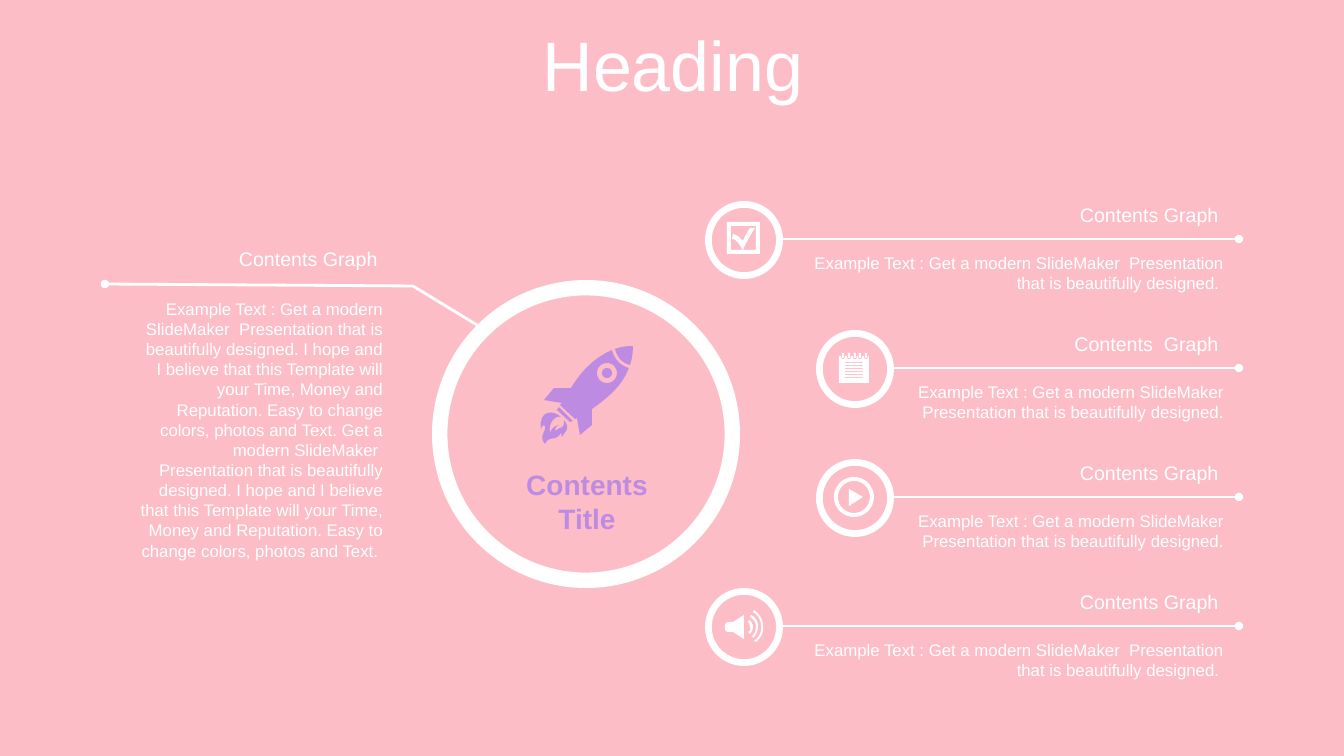
import math

from lxml import etree
from pptx import Presentation
from pptx import util as u
from pptx.dml.color import RGBColor
from pptx.enum import shapes, text
from pptx.oxml.ns import qn

PX = 914400 / 100.8  # EMU per px
FINE = 20            # freeform units per px
PINK, WHITE, PURPLE = "FDBDC7", "FFFFFF", "BE8BE2"
EXAMPLE = "Example Text : Get a modern SlideMaker  Presentation that is beautifully designed. "
HOPE = ("I hope and I believe that this Template will your Time, Money and Reputation. "
        "Easy to change colors, photos and Text. ")
STORY = EXAMPLE + HOPE + EXAMPLE.replace("Example Text : ", "") + HOPE


def emu(*lengths):
    return [u.Emu(round(v * PX)) for v in lengths]


def color(value):
    return RGBColor.from_string(value)


def paint(sp, fill):
    sp.shadow.inherit = False
    sp.fill.solid()
    sp.fill.fore_color.rgb = color(fill)
    sp.line.fill.background()


def add_text(s, box, content, size=12, fill=WHITE, bold=False,
             align=text.PP_ALIGN.RIGHT, spacing=None):
    tf = s.shapes.add_textbox(*emu(*box)).text_frame
    tf.word_wrap = True
    tf.vertical_anchor = text.MSO_ANCHOR.MIDDLE
    for i, line in enumerate(content.split("\n")):
        p = tf.add_paragraph() if i else tf.paragraphs[0]
        p.alignment = align
        if spacing:
            p.line_spacing = spacing
        r = p.add_run()
        r.text = line
        r.font.name, r.font.size, r.font.bold = "Arial", u.Pt(size), bold
        r.font.color.rgb = color(fill)


def add_line(s, start, end, dot=None):
    """dot is 'headEnd' or 'tailEnd', the end that carries the oval."""
    c = s.shapes.add_connector(shapes.MSO_CONNECTOR.STRAIGHT, *emu(*start, *end))
    c.line.color.rgb = color(WHITE)
    c.line.width = u.Pt(2)
    if dot:
        etree.SubElement(c.line._get_or_add_ln(), qn("a:" + dot), type="oval")
    etree.SubElement(c._element.spPr, qn("a:effectLst"))


def add_ring(s, x, y, size, thickness):
    sp = s.shapes.add_shape(shapes.MSO_SHAPE.DONUT, *emu(x, y, size, size))
    sp.adjustments[0] = thickness
    paint(sp, WHITE)


# Outlines: a pair is a corner, six numbers are a cubic curve
def circle(cx, cy, radius):
    turns = [2 * math.pi * i / 48 for i in range(48)]
    return [(cx + radius * math.cos(t), cy + radius * math.sin(t)) for t in turns]


def rect(x, y, w, h):
    return [(x, y), (x + w, y), (x + w, y + h), (x, y + h)]


def flatten(outline, steps=8):
    points = []
    for node in outline:
        if len(node) == 2:
            points.append(node)
            continue
        a, b, c, d = points[-1], node[:2], node[2:4], node[4:]
        for t in (i / steps for i in range(1, steps + 1)):
            v = 1 - t
            points.append(tuple(
                v**3 * a[k] + 3 * v * v * t * b[k] + 3 * v * t * t * c[k] + t**3 * d[k]
                for k in (0, 1)))
    return [(x * FINE, y * FINE) for x, y in points]


def add_icon(s, x, y, outlines, fill=WHITE):
    fb = None
    for outline in outlines:
        points = flatten(outline)
        if fb is None:
            fb = s.shapes.build_freeform(*points[0], scale=PX / FINE)
        else:
            fb.move_to(*points[0])
        fb.add_line_segments(points[1:], close=True)
    paint(fb.convert_to_shape(*emu(x, y)), fill)


def notepad():
    rings = (4, 10, 16, 21, 27)
    page = [(0, 3)]
    for c in rings:
        page += [(c - 2, 3), (c - 2, 4), (c - 2, 7, c + 2, 7, c + 2, 4), (c + 2, 3)]
    page += [(30, 3), (30, 30), (0, 30)]
    return ([page] + [rect(6, 9 + 3 * i, 18, 1) for i in range(6)]
            + [rect(c - 1, 0, 2, 5) for c in rings])


ROCKET = [
    # flame
    [(20, 71), (15, 69, 7, 76, 9, 87), (11, 81, 15, 80, 18, 79), (17, 80, 13, 81, 15, 85),
     (18, 80, 24, 84, 23, 74), (30, 83, 24, 85, 21, 91), (20, 90, 21, 84, 20, 87),
     (15, 96, 8, 89, 4, 98), (-3, 90, 6, 85, 4, 80), (3, 79, 1, 79, 0, 84),
     (-3, 63, 13, 64, 20, 71)],
    # band, window, body, nose
    [(18, 61), (32, 75), (31, 75, 30, 76, 29, 76), (16, 64)],
    circle(66, 27, 5), circle(66, 27, 10),
    [(71, 4), (73, 13, 80, 20, 88, 22), (81, 41, 65, 53, 51, 63), (51, 79), (39, 89),
     (36, 72), (34, 73), (19, 59), (21, 57), (3, 54), (13, 42), (30, 42),
     (39, 27, 52, 12, 71, 4)],
    [(92, 0), (92, 7, 91, 13, 89, 19), (81, 17, 76, 11, 74, 3), (79, 1, 85, 0, 92, 0)],
]
CHECK = [
    rect(0, 0, 33, 32),
    [(4, 4), (4, 28), (16, 28), (13, 24, 10, 17, 5, 17), (6, 12), (12, 14, 13, 16, 16, 19),
     (18, 14, 20, 11, 23, 6), (28, 6), (24, 12, 19, 21, 16, 28), (29, 28), (29, 4)],
]
PLAY = [circle(19, 19, 20), circle(19, 19, 16), [(14, 11), (28, 19), (14, 28)]]
SPEAKER = [
    [(19, 5), (19, 29), (8, 22), (3, 22), (2, 22, 0, 21, 0, 19), (0, 15),
     (0, 14, 2, 12, 3, 12), (8, 12)],
    [(24, 10), (26, 11, 28, 14, 28, 17), (28, 19, 27, 22, 25, 24), (23, 22),
     (25, 21, 26, 19, 25, 17), (25, 15, 24, 13, 23, 12)],
    [(26, 5), (30, 7, 33, 11, 33, 16), (33, 21, 31, 25, 28, 28), (27, 26),
     (30, 24, 31, 20, 31, 16), (31, 12, 28, 9, 25, 7)],
    [(29, 0), (34, 4, 38, 9, 38, 16), (39, 22, 36, 28, 31, 32), (29, 31),
     (34, 27, 37, 22, 36, 16), (36, 10, 33, 5, 28, 2)],
]


def add_hub(s, x, y, size):
    add_ring(s, x, y, size, 0.05)
    add_icon(s, x + 109, y + 66, ROCKET, PURPLE)
    add_text(s, (x + 75, y + 182, 160, 78), "Contents\nTitle", size=20, fill=PURPLE,
             bold=True, align=text.PP_ALIGN.CENTER)


def add_story(s, x, y, w, h):
    add_text(s, (x, y, w, 34), "Contents Graph ", size=14)
    add_text(s, (x, y + 50, w, h - 50), STORY)
    bend = (x + 286, y + 44)
    add_line(s, (x - 22, y + 42), bend, "headEnd")
    add_line(s, bend, (x + 350, y + 83))


def add_item(s, x, y, right, title, icon, dx, dy, gap):
    """One ringed icon with its rule, title and text; dx, dy place the icon in the ring."""
    add_ring(s, x, y, 78, 0.087)
    add_icon(s, x + dx, y + dy, icon)
    add_line(s, (x + 77, y + 38), (right, y + 38), "tailEnd")
    left, w = x + gap, right - 5 - x - gap
    add_text(s, (left, y - 3, w, 34), title, size=14)
    add_text(s, (left, y + 47, w, 50), EXAMPLE)


def main():
    prs = Presentation()
    prs.slide_width, prs.slide_height = emu(1344, 756)
    s = prs.slides.add_slide(prs.slide_layouts[6])
    s.background.fill.solid()
    s.background.fill.fore_color.rgb = color(PINK)

    add_text(s, (35, 31, 1276, 80), "Heading", size=50,
             align=text.PP_ALIGN.CENTER, spacing=0.8)
    add_hub(s, 432, 280, 308)
    add_story(s, 127, 242, 266, 325)

    items = [
        (705, "Contents Graph ", CHECK, 22, 21, 82),
        (816, "Contents  Graph ", notepad(), 23, 23, 88),
        (816, "Contents Graph ", PLAY, 19, 19, 88),
        (705, "Contents Graph ", SPEAKER, 20, 22, 82),
    ]
    for i, (x, *details) in enumerate(items):
        add_item(s, x, 201 + 129 * i, 1239, *details)

    prs.save("out.pptx")


if __name__ == "__main__":
    main()
